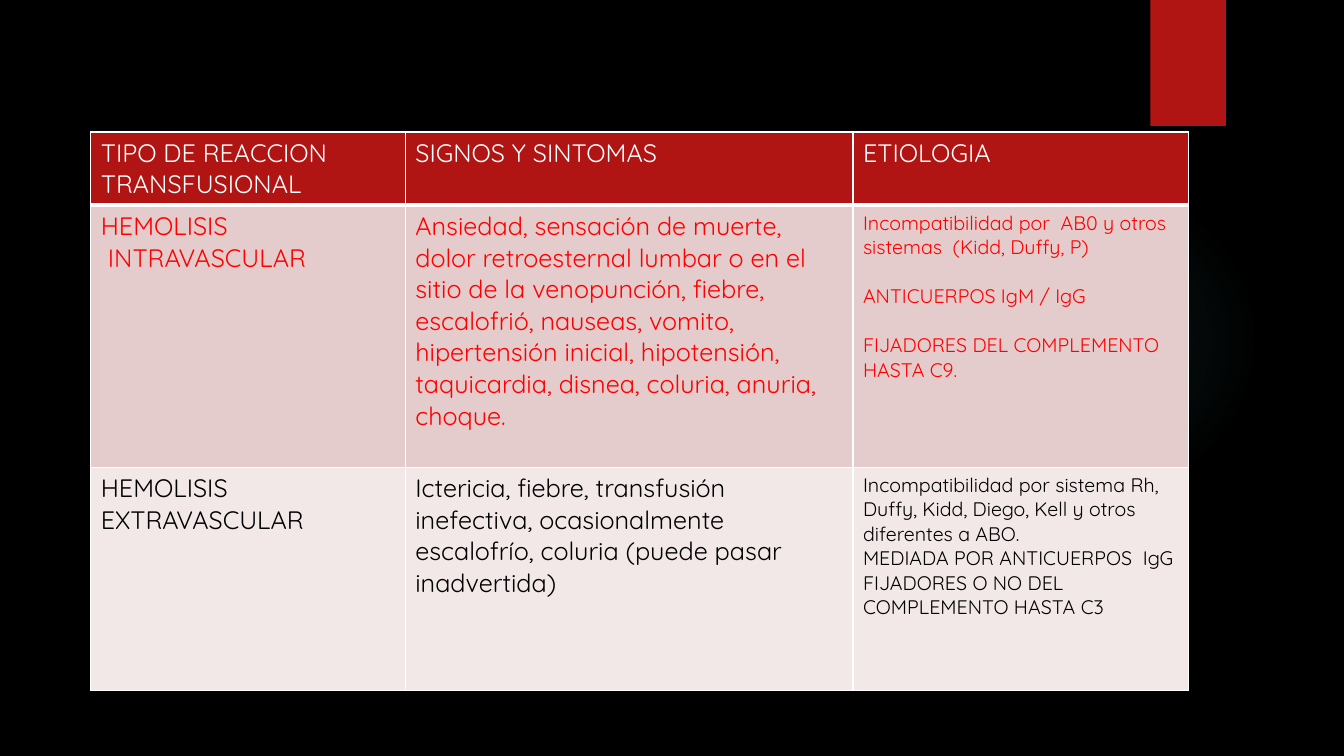
from lxml.etree import SubElement
from pptx import Presentation
from pptx.dml.color import RGBColor
from pptx.enum.shapes import MSO_SHAPE
from pptx.oxml import parse_xml
from pptx.oxml.ns import nsdecls, qn
from pptx.util import Inches, Pt

FONT = "Quicksand"
WHITE, RED = "FFFFFF", "B01513"
COLUMN_WIDTHS = (3.12, 4.44, 3.33)
ROW_HEIGHTS = (0.7, 2.6, 2.21)
ROW_STYLES = ((RED, WHITE), ("E4CCCC", "FF0000"), ("F2E8E7", "000000"))
BLANK_LINE = 17.5
ROWS = (
    (["TIPO DE REACCION TRANSFUSIONAL"], ["SIGNOS Y SINTOMAS"], ["ETIOLOGIA"]),
    (
        ["HEMOLISIS", "INTRAVASCULAR"],
        ["Ansiedad, sensación de muerte, dolor retroesternal lumbar o en el sitio "
         "de la venopunción, fiebre, escalofrió, nauseas, vomito, hipertensión "
         "inicial, hipotensión, taquicardia, disnea, coluria, anuria, choque."],
        ["Incompatibilidad por  AB0 y otros sistemas  (Kidd, Duffy, P)",
         "ANTICUERPOS IgM / IgG",
         "FIJADORES DEL COMPLEMENTO HASTA C9."],
    ),
    (
        ["HEMOLISIS EXTRAVASCULAR"],
        ["Ictericia, fiebre, transfusión inefectiva, ocasionalmente escalofrío, "
         "coluria (puede pasar inadvertida)"],
        ["Incompatibilidad por sistema Rh, Duffy, Kidd, Diego, Kell y otros "
         "diferentes a ABO.",
         "MEDIADA POR ANTICUERPOS  IgG FIJADORES O NO DEL COMPLEMENTO HASTA C3"],
    ),
)


def color(value):
    return RGBColor.from_string(value)


def add_plain_shape(page, kind, box):
    shape = page.shapes.add_shape(kind, *map(Inches, box))
    shape.shadow.inherit = False
    shape.line.fill.background()
    return shape


def add_glow(page, box):
    glow = add_plain_shape(page, MSO_SHAPE.OVAL, box)
    stops = "".join(
        f'<a:gs pos="{place * 1000}"><a:srgbClr val="50B9C1">'
        f'<a:alpha val="{alpha * 1000}"/></a:srgbClr></a:gs>'
        for place, alpha in ((0, 7), (36, 6), (69, 0))
    )
    gradient = parse_xml(
        f'<a:gradFill {nsdecls("a")}><a:gsLst>{stops}</a:gsLst><a:path path="circle">'
        '<a:fillToRect l="50000" t="50000" r="50000" b="50000"/></a:path></a:gradFill>'
    )
    glow.element.spPr.find(qn("a:prstGeom")).addnext(gradient)


def add_ribbon(page, box):
    ribbon = add_plain_shape(page, MSO_SHAPE.RECTANGLE, box)
    ribbon.fill.solid()
    ribbon.fill.fore_color.rgb = color(RED)


def add_borders(cell, bottom_width):
    properties = cell._tc.get_or_add_tcPr()
    for side, width in (("L", 1), ("R", 1), ("T", 1), ("B", bottom_width)):
        line = SubElement(properties, qn(f"a:ln{side}"), w=str(Pt(width)))
        fill = SubElement(line, qn("a:solidFill"))
        SubElement(fill, qn("a:srgbClr"), val=WHITE)


def fill_cell(cell, lines, size, style, bottom_width):
    background, ink = style
    add_borders(cell, bottom_width)
    cell.fill.solid()
    cell.fill.fore_color.rgb = color(background)
    cell.text_frame.text = "\n".join(lines)
    for para in cell.text_frame.paragraphs:
        para.font.size = Pt(size)
        for span in para.runs:
            span.font.name = FONT
            span.font.size = Pt(size)
            span.font.color.rgb = color(ink)


def add_reaction_table(page, left, top):
    box = (left, top, sum(COLUMN_WIDTHS), sum(ROW_HEIGHTS))
    table = page.shapes.add_table(
        len(ROWS), len(COLUMN_WIDTHS), *map(Inches, box)
    ).table
    for column, width in zip(table.columns, COLUMN_WIDTHS):
        column.width = Inches(width)
    for row, height in zip(table.rows, ROW_HEIGHTS):
        row.height = Inches(height)
    for row_index, cells in enumerate(ROWS):
        header = row_index == 0
        for column_index, lines in enumerate(cells):
            size = 14 if column_index == 2 and not header else 18
            fill_cell(table.cell(row_index, column_index), lines, size,
                      ROW_STYLES[row_index], 3 if header else 1)
    intravascular = table.cell(1, 0).text_frame.paragraphs[1]
    intravascular._p.get_or_add_pPr().set("marL", str(Inches(0.07)))
    for para in table.cell(1, 2).text_frame.paragraphs[1:]:
        para.space_before = Pt(BLANK_LINE)


def main():
    deck = Presentation()
    deck.slide_width, deck.slide_height = Inches(13.33), Inches(7.5)
    page = deck.slides.add_slide(deck.slide_layouts[6])
    page.background.fill.solid()
    page.background.fill.fore_color.rgb = color("000000")
    add_glow(page, (9.41, 1.83, 3.08, 3.08))
    add_ribbon(page, (11.41, 0, 0.75, 1.25))
    add_reaction_table(page, 0.9, 1.31)
    deck.save("out.pptx")


if __name__ == "__main__":
    main()
